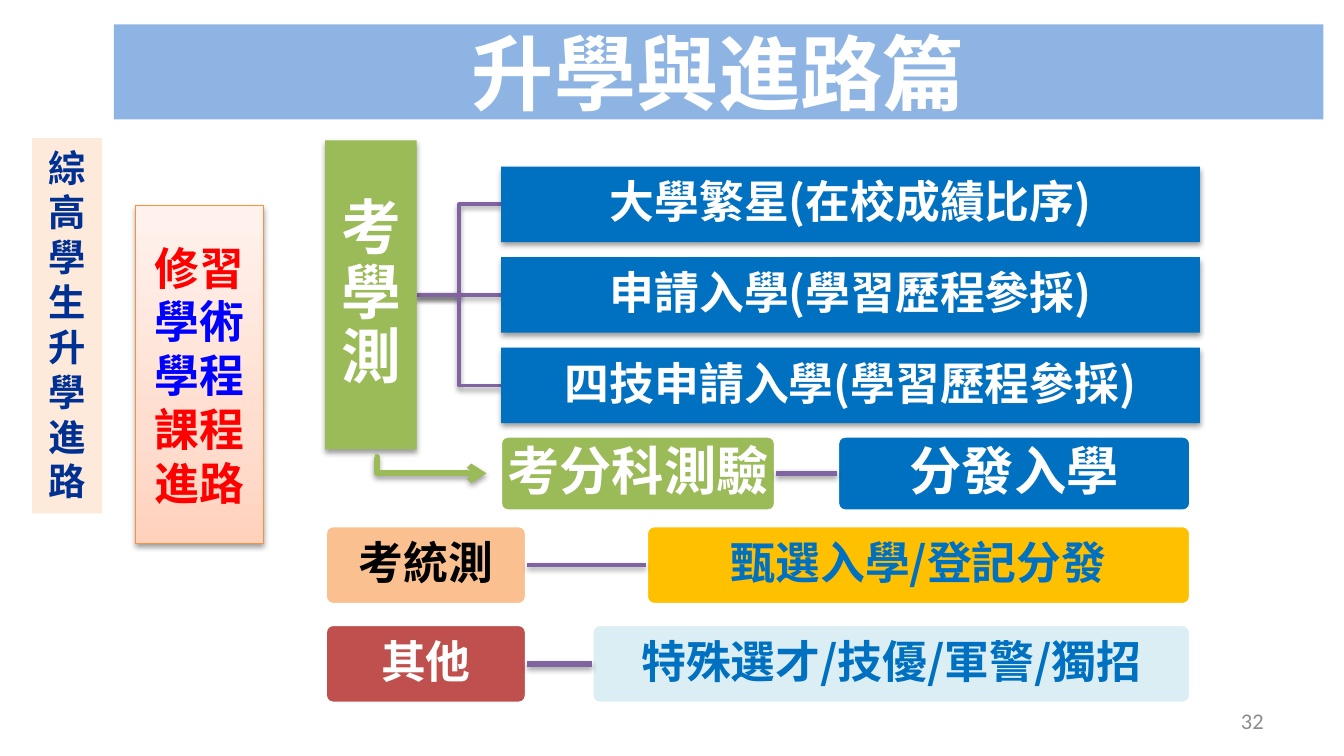
from lxml.etree import SubElement as Sub
from copy import deepcopy
from pptx import Presentation
from pptx.util import Pt
from pptx.dml.color import RGBColor as Rgb
from pptx.enum.shapes import MSO_SHAPE as Kind, MSO_CONNECTOR as Link
from pptx.enum.text import PP_ALIGN as Align, MSO_ANCHOR as Anchor
from pptx.oxml.ns import qn

HUES = {
    "white": "FFFFFF", "black": "000000", "gray": "8C8C8C", "sky": "8EB4E3",
    "cream": "FDEADA", "navy": "003192", "red": "FF0000", "blue": "0000FF",
    "green": "9BBB59", "azure": "0070C0", "violet": "8064A2", "peach": "FAC090",
    "gold": "FFC000", "brick": "C0504D", "ice": "DBEEF4", "rim": "F69240",
    "deep": "FFD2BD", "mid": "FFDED0", "pale": "FFF2ED",
}


class Board:
    def __init__(self, slide, font):
        self.slide, self.font = slide, font

    def hue(self, name):
        return Rgb.from_string(HUES[name])

    def shade(self, shape, on=True):
        props = shape._element.spPr
        effects = Sub(props, qn("a:effectLst"))
        if on:
            drop = Sub(effects, qn("a:outerShdw"), blurRad=str(Pt(3.1)),
                       dist=str(Pt(1.6)), dir="5400000", rotWithShape="0")
            color = Sub(drop, qn("a:srgbClr"), val=HUES["black"])
            Sub(color, qn("a:alpha"), val="38000")

    def text(self, shape, runs, size, pad=(2, 2), space=None, bold=True,
             font=None, align=Align.CENTER, anchor=Anchor.MIDDLE):
        frame = shape.text_frame
        side, edge = map(Pt, pad)
        look = {"word_wrap": True, "vertical_anchor": anchor,
                "margin_left": side, "margin_right": side,
                "margin_top": edge, "margin_bottom": edge}
        for key, val in look.items():
            setattr(frame, key, val)
        para = frame.paragraphs[0]
        para.alignment, para.line_spacing = align, space
        name = font or self.font
        for words, color in runs:
            run = para.add_run()
            run.text = words
            for key, val in {"size": Pt(size), "bold": bold, "name": name}.items():
                setattr(run.font, key, val)
            run.font.color.rgb = self.hue(color)
            Sub(run._r.get_or_add_rPr(), qn("a:ea"), typeface=name)

    def box(self, area, fill=None, line=None, width=2, shadow=False, round=False):
        kind = Kind.ROUNDED_RECTANGLE if round else Kind.RECTANGLE
        shape = self.slide.shapes.add_shape(kind, *map(Pt, area))
        if round:
            shape.adjustments[0] = 0.1
        if fill:
            shape.fill.solid()
            shape.fill.fore_color.rgb = self.hue(fill)
        else:
            self.blend(shape)
        if line:
            shape.line.color.rgb = self.hue(line)
            shape.line.width = Pt(width)
        else:
            shape.line.fill.background()
        self.shade(shape, shadow)
        return shape

    def blend(self, shape):
        shape.fill.gradient()
        shape.fill.gradient_angle = 90
        stops = shape._element.spPr.find(".//" + qn("a:gsLst"))
        stops.insert(1, deepcopy(stops[0]))
        marks = ((0, "deep"), (0.35, "mid"), (1, "pale"))
        for stop, (place, color) in zip(shape.fill.gradient_stops, marks):
            stop.position = place
            stop.color.rgb = self.hue(color)

    def note(self, area, words, size, color, **look):
        shape = self.slide.shapes.add_textbox(*map(Pt, area))
        self.text(shape, [(words, color)], size, **look)

    def card(self, area, words, size, fill, color="white"):
        shape = self.box(area, fill, "white", round=True)
        self.text(shape, [(words, color)], size, space=0.9)

    def bar(self, area, words, size, fill):
        shape = self.box(area, fill, shadow=True)
        self.text(shape, [(words, "white")], size, space=0.9)

    def wire(self, ends, width=2, color="violet", bend=None, arrow=False):
        kind = Link.STRAIGHT if bend is None else Link.ELBOW
        wire = self.slide.shapes.add_connector(kind, *map(Pt, ends))
        wire.line.color.rgb = self.hue(color)
        wire.line.width = Pt(width)
        if bend is not None:
            guides = wire._element.spPr.find(".//" + qn("a:avLst"))
            Sub(guides, qn("a:gd"), name="adj1", fmla=f"val {round(bend * 100000)}")
        if arrow:
            Sub(wire.line._get_or_add_ln(), qn("a:tailEnd"), type="arrow")
        self.shade(wire)

    def row(self, top, high, size, width, left, right):
        for x, wide, *rest in (left, right):
            words, fill, color = rest
            self.card((x, top, wide, high), words, size, fill, color)
        y = top + high / 2
        self.wire((left[0] + left[1], y, right[0], y), width)


def main():
    deck = Presentation()
    deck.slide_width, deck.slide_height = Pt(720), Pt(405)
    board = Board(deck.slides.add_slide(deck.slide_layouts[6]), "Noto Sans CJK SC")

    board.note((516, 375, 168, 21.6), "32", 12, "gray", pad=(7.2, 3.6),
               font="Calibri", bold=False, align=Align.RIGHT)
    title = board.box((61, 13, 648, 51), "sky")
    board.text(title, [("升學與進路篇", "white")], 44, pad=(7.2, 3.6))
    side = board.box((17.2, 74, 37.5, 201), "cream")
    board.text(side, [("綜高學生升學進路", "navy")], 20, pad=(7.2, 3.6),
               anchor=Anchor.TOP)
    track = board.box((72.7, 110.2, 68.4, 181), line="rim", width=0.75, shadow=True)
    board.text(track, [("修習", "red"), ("學術學程", "blue"), ("課程進路", "red")],
               24, pad=(5, 3))

    x, hub, step, high = 268.5, 158, 48.5, 40.4
    paths = ("大學繁星(在校成績比序)", "申請入學(學習歷程參採)", "四技申請入學(學習歷程參採)")
    for i in range(len(paths)):
        y = hub + (i - 1) * step
        board.wire((223.3, hub, x, y), bend=None if y == hub else 0.5)
    board.bar((174.2, 75.2, 49.1, 165.6), "考學測", 32, "green")
    for i, words in enumerate(paths):
        y = hub + (i - 1) * step
        board.bar((x, y - high / 2, 374.4, high), words, 24, "azure")

    board.row(233.5, high, 28, 3, (268, 147.6, "考分科測驗", "green", "white"),
              (448.6, 189.4, "分發入學", "azure", "white"))
    board.wire((201, 244.8, 260.6, 253.6), 3, "green", bend=0.017, arrow=True)
    board.row(281.5, 42.5, 24, 2, (174.2, 108, "考統測", "peach", "black"),
              (346.2, 291.8, "甄選入學/登記分發", "gold", "azure"))
    board.row(334.4, 42.5, 24, 3, (174.2, 108, "其他", "brick", "white"),
              (317, 321, "特殊選才/技優/軍警/獨招", "ice", "azure"))
    deck.save("out.pptx")


if __name__ == "__main__":
    main()
